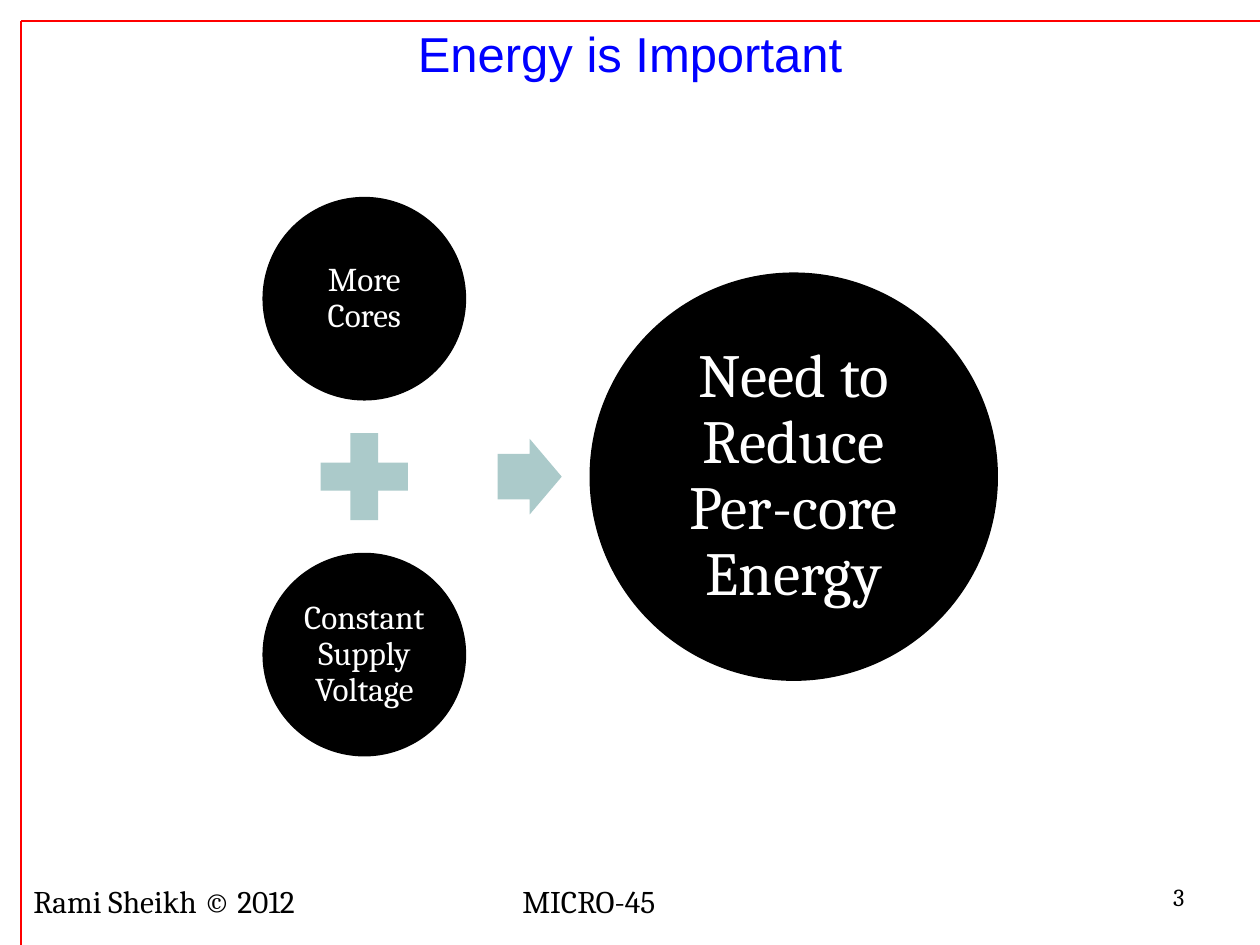
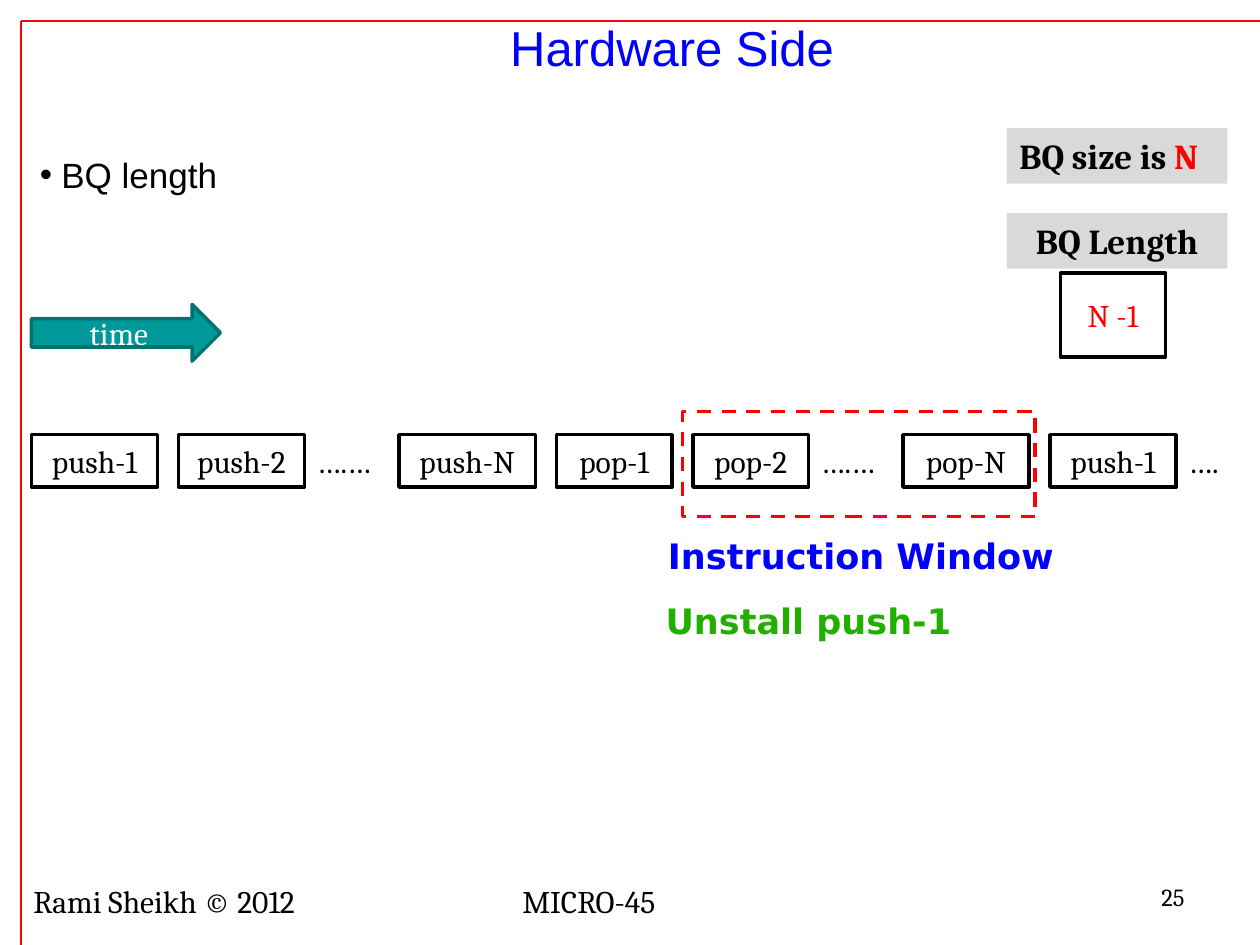
from lxml import etree
from pptx import Presentation
from pptx.dml.color import RGBColor
from pptx.enum.dml import MSO_LINE
from pptx.enum.shapes import MSO_CONNECTOR, MSO_SHAPE
from pptx.enum.text import MSO_ANCHOR, MSO_AUTO_SIZE, PP_ALIGN
from pptx.oxml.ns import qn
from pptx.util import Inches, Pt

LEFT, CENTER, RIGHT = PP_ALIGN.LEFT, PP_ALIGN.CENTER, PP_ALIGN.RIGHT
TOP, MIDDLE = MSO_ANCHOR.TOP, MSO_ANCHOR.MIDDLE
RECT, OVAL = MSO_SHAPE.RECTANGLE, MSO_SHAPE.OVAL
PLUS, ARROW = MSO_SHAPE.MATH_PLUS, MSO_SHAPE.RIGHT_ARROW
STRAIGHT, DASH = MSO_CONNECTOR.STRAIGHT, MSO_LINE.DASH

COLORS = {
    "black": "000000", "white": "FFFFFF", "red": "FF0000", "blue": "0000FF",
    "green": "22B000", "gray": "D9D9D9", "sage": "ABCACA",
    "teal": "009999", "dark_teal": "007171",
}
SERIF, SANS, WIDE = "Cambria", "Arial", "DejaVu Sans"

# The slide is a grid of 120 columns by 90 rows
COLUMNS, ROWS = 120, 90
CELL = Inches(10) / COLUMNS
TITLE_ONLY, TITLE_AND_BODY = 5, 1


def cells(*counts):
    return [round(count * CELL) for count in counts]


def color(name):
    return RGBColor.from_string(COLORS[name])


# Text
def style(font, size, ink="black", face=SERIF, bold=False):
    font.size, font.name, font.bold = Pt(size), face, bold
    font.color.rgb = color(ink)


def write(frame, text, size, ink="black", face=SERIF, bold=False,
          align=CENTER, anchor=MIDDLE):
    frame.word_wrap = True
    frame.auto_size = MSO_AUTO_SIZE.NONE
    frame.vertical_anchor = anchor
    paragraph = frame.paragraphs[0]
    paragraph.text = text
    paragraph.alignment = align
    for run in paragraph.runs:
        style(run.font, size, ink, face, bold)
    return paragraph


def add_label(slide, area, text, size, **look):
    label = slide.shapes.add_textbox(*cells(*area))
    return write(label.text_frame, text, size, **look)


def fill_placeholder(placeholder, area, text, size, **look):
    (placeholder.left, placeholder.top,
     placeholder.width, placeholder.height) = cells(*area)
    return write(placeholder.text_frame, text, size, **look)


# Shapes and lines
def add_figure(slide, kind, area, fill=None, outline=None, weight=2):
    figure = slide.shapes.add_shape(kind, *cells(*area))
    figure.shadow.inherit = False
    if fill:
        figure.fill.solid()
        figure.fill.fore_color.rgb = color(fill)
    else:
        figure.fill.background()
    if outline:
        figure.line.color.rgb = color(outline)
        figure.line.width = Pt(weight)
    else:
        figure.line.fill.background()
    return figure


def add_rule(slide, start, end, weight):
    rule = slide.shapes.add_connector(STRAIGHT, *cells(*start, *end))
    rule.line.color.rgb = color("red")
    rule.line.width = Pt(weight)
    etree.SubElement(rule._element.spPr, qn("a:effectLst"))


def add_circle(slide, center, diameter, text, size, margin):
    left, top = (axis - diameter / 2 for axis in center)
    circle = add_figure(slide, OVAL, (left, top, diameter, diameter), "black")
    frame = circle.text_frame
    frame.margin_left = frame.margin_right = Inches(margin)
    frame.margin_top = frame.margin_bottom = Inches(margin)
    write(frame, text, size, "white").line_spacing = 0.9


def add_box(slide, area, text, ink="black"):
    box = add_figure(slide, RECT, area, outline="black")
    write(box.text_frame, text, 18, ink)


def add_tag(slide, top, text, align):
    tag = add_figure(slide, RECT, (95.9, top, 21, 5.3), "gray")
    return write(tag.text_frame, text, 20, bold=True, align=align)


# Frame, title and footer of every slide
def start_slide(deck, layout, title, title_area, number):
    slide = deck.slides.add_slide(deck.slide_layouts[layout])
    corner = (2, 2)
    add_rule(slide, corner, (COLUMNS, 2), 1)
    add_rule(slide, corner, (2, ROWS), 0.75)
    fill_placeholder(slide.shapes.title, title_area, title, 28,
                     ink="blue", face=SANS)
    add_label(slide, (107, 83.4, 7, 4.8), str(number), 14,
              align=RIGHT, anchor=TOP)

    footer = add_label(slide, (2, 83.4, 104, 4.8),
                       "Rami Sheikh © 2012\tMICRO-45", 18,
                       align=LEFT, anchor=TOP)
    tabs = etree.SubElement(footer._p.get_or_add_pPr(), qn("a:tabLst"))
    etree.SubElement(tabs, qn("a:tab"), pos=str(Inches(3.88)), algn="l")
    return slide


def build_energy(deck):
    slide = start_slide(deck, TITLE_ONLY, "Energy is Important",
                        (4.8, 1, 110.4, 8), 3)
    cause_x, middle = 34.7, 45.4
    cause_size, plus_size, effect_size, gap = 19.4, 11.3, 38.9, 1.6
    step = (cause_size + plus_size) / 2 + gap

    # Two causes joined by a plus
    for side, cause in ((-1, "More Cores"), (1, "Constant Supply Voltage")):
        add_circle(slide, (cause_x, middle + side * step), cause_size,
                   cause, 19, 0.03)
    add_figure(slide, PLUS, (cause_x - plus_size / 2, middle - plus_size / 2,
                             plus_size, plus_size), "sage")

    # Their effect
    leads_to = add_figure(slide, ARROW, (47.4, middle - 3.6, 6.1, 7.2), "sage")
    leads_to.adjustments[0] = 0.6
    add_circle(slide, (75.6, middle), effect_size,
               "Need to Reduce Per-core Energy", 35, 0.05)


def build_hardware(deck):
    slide = start_slide(deck, TITLE_AND_BODY, "Hardware Side",
                        (19, 1.1, 90, 6.8), 25)

    # Topic
    topic = fill_placeholder(slide.placeholders[1], (2.6, 14, 96, 5.3),
                             "BQ length", 20, face=SANS,
                             align=LEFT, anchor=TOP)
    topic.space_before = Pt(0)
    properties = topic._p.get_or_add_pPr()
    properties.set("marL", str(Inches(0.17)))
    properties.set("indent", str(-Inches(0.17)))
    etree.SubElement(properties, qn("a:buChar"), char="•")

    # Instruction window
    window = add_figure(slide, RECT, (65, 39.2, 33.6, 10), "white", "red")
    window.line.dash_style = DASH
    for area, text, ink in (
            ((61, 50.3, 42, 5.3), "Instruction Window", "blue"),
            ((60.7, 56.4, 32.6, 5.3), "Unstall push-1", "green")):
        add_label(slide, area, text, 20, ink=ink, face=WIDE, bold=True)

    # Instruction stream: boxes with their widths, dots where some are left out
    stream = (("push-1", 12), ("push-2", 12), ("….…", 0), ("push-N", 13),
              ("pop-1", 11), ("pop-2", 11), ("….…", 0), ("pop-N", 12),
              ("push-1", 12), ("….", 0))
    gap, dots_step, dots_width, top, height = 2, 9, 8, 41.4, 5
    left = 3
    for instruction, width in stream:
        if width:
            add_box(slide, (left, top, width, height), instruction)
            left += width + gap
        else:
            add_label(slide, (left - gap, top, dots_width, height),
                      instruction, 18, align=LEFT)
            left += dots_step - gap

    # Time axis
    time = add_figure(slide, ARROW, (3, 29, 18, 5.4), "teal", "dark_teal")
    write(time.text_frame, "time", 18, "white")

    # Queue size and length
    queue_size = add_tag(slide, 12.2, "BQ size is ", LEFT)
    limit = queue_size.add_run()
    limit.text = "N"
    style(limit.font, 20, "red", bold=True)
    add_tag(slide, 20.3, "BQ Length", CENTER)
    add_box(slide, (101, 26, 10, 8), "N -1", "red")


def main():
    deck = Presentation()
    deck.slide_width, deck.slide_height = cells(COLUMNS, ROWS)
    build_energy(deck)
    build_hardware(deck)
    deck.save("out.pptx")


if __name__ == "__main__":
    main()
